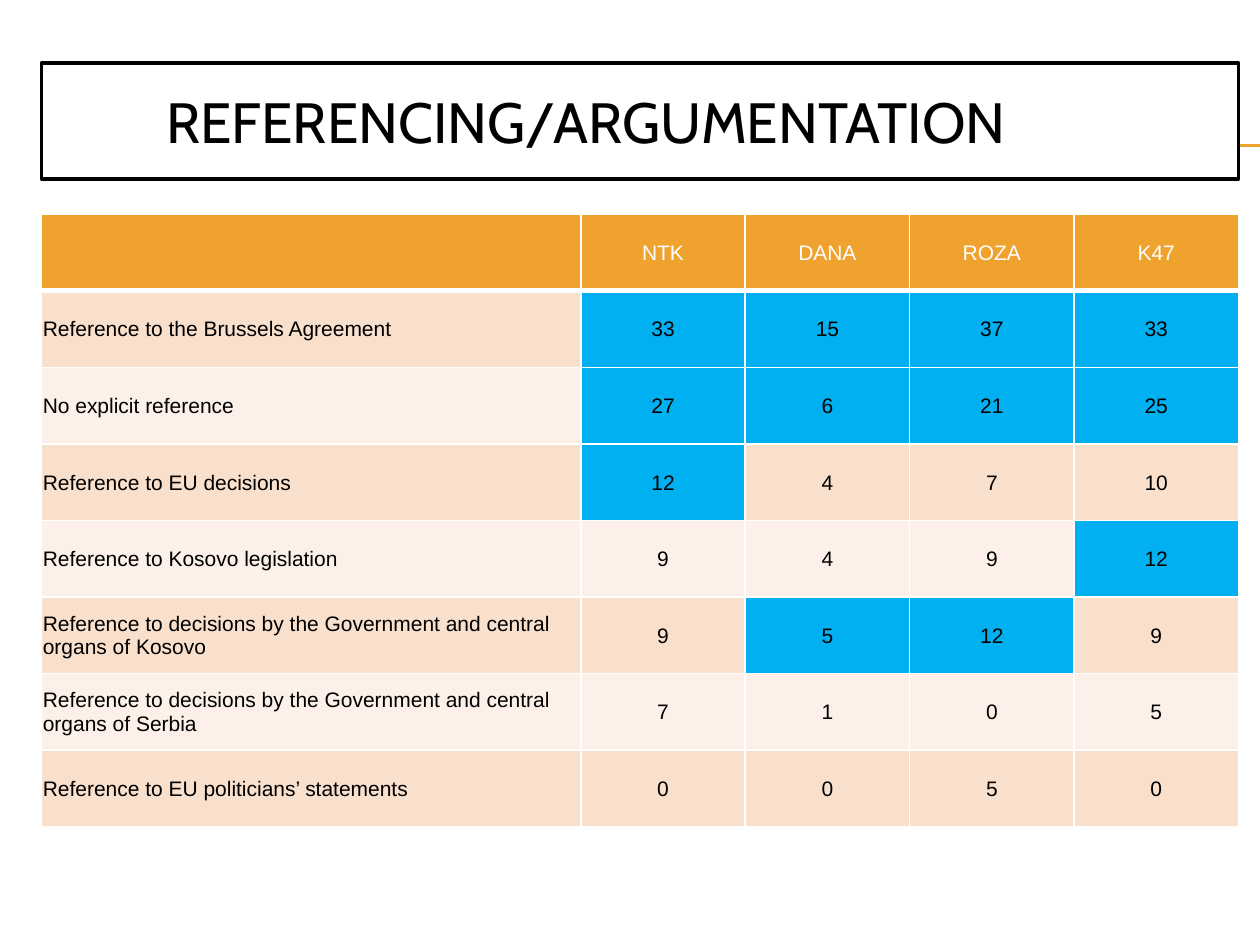
from lxml import etree
from pptx import Presentation
from pptx.dml.color import RGBColor
from pptx.enum.shapes import MSO_CONNECTOR
from pptx.enum.text import MSO_ANCHOR, MSO_AUTO_SIZE, PP_ALIGN
from pptx.oxml.ns import qn
from pptx.util import Inches, Pt

STRAIGHT = MSO_CONNECTOR.STRAIGHT
MIDDLE = MSO_ANCHOR.MIDDLE
NO_AUTOFIT = MSO_AUTO_SIZE.NONE
LEFT, CENTER = PP_ALIGN.LEFT, PP_ALIGN.CENTER

BLACK = RGBColor(0x00, 0x00, 0x00)
WHITE = RGBColor(0xFF, 0xFF, 0xFF)
ORANGE = RGBColor(0xF0, 0xA2, 0x2E)
PEACH = RGBColor(0xF9, 0xE0, 0xCD)
CREAM = RGBColor(0xFC, 0xF0, 0xE8)
BLUE = RGBColor(0x00, 0xB0, 0xF0)

TITLE_ONLY = 5
TOP_RANKS = 3  # the highest values of each channel are highlighted

CHANNELS = ["NTK", "DANA", "ROZA", "K47"]
REFERENCES = [
    ("Reference to the Brussels Agreement", [33, 15, 37, 33]),
    ("No explicit reference", [27, 6, 21, 25]),
    ("Reference to EU decisions", [12, 4, 7, 10]),
    ("Reference to Kosovo legislation", [9, 4, 9, 12]),
    ("Reference to decisions by the Government and central organs of Kosovo", [9, 5, 12, 9]),
    ("Reference to decisions by the Government and central organs of Serbia", [7, 1, 0, 5]),
    ("Reference to EU politicians’ statements", [0, 0, 5, 0]),
]


def write_text(frame, text, font="Arial", size=12, color=BLACK, align=LEFT):
    para = frame.paragraphs[0]
    para.alignment = align
    span = para.add_run()
    span.text = text
    span.font.name = font
    span.font.size = Pt(size)
    span.font.color.rgb = color


def set_border(cell, side, width, color=WHITE):
    properties = cell._tc.get_or_add_tcPr()
    line = etree.SubElement(properties, qn(f"a:ln{side}"), w=str(Pt(width)))
    fill = etree.SubElement(line, qn("a:solidFill"))
    etree.SubElement(fill, qn("a:srgbClr"), val=str(color))


class ReferenceSlide:
    """Holds the style and the current slide."""

    title_font = "Cabin"
    title_size = 32.4
    left, width = 0.33, 9.5

    def __init__(self, deck):
        self.slide = deck.slides.add_slide(deck.slide_layouts[TITLE_ONLY])

    def add_title(self, text, top, height):
        title = self.slide.shapes.title
        title.left, title.top = Inches(self.left), Inches(top)
        title.width, title.height = Inches(self.width), Inches(height)
        title.fill.solid()
        title.fill.fore_color.rgb = WHITE
        title.line.color.rgb = BLACK
        title.line.width = Pt(2)
        frame = title.text_frame
        frame.auto_size = NO_AUTOFIT
        frame.word_wrap = True
        frame.vertical_anchor = MIDDLE
        frame.margin_left = Inches(0.99)
        write_text(frame, text, self.title_font, self.title_size)

    def add_rule(self, height):
        rule = self.slide.shapes.add_connector(
            STRAIGHT, Inches(0.56), Inches(height), Inches(10), Inches(height))
        rule.line.color.rgb = ORANGE
        rule.line.width = Pt(0.75)
        etree.SubElement(rule.element.spPr, qn("a:effectLst"))
        # Rules run behind the title box
        self.slide.shapes.title.element.addprevious(rule.element)

    def add_cell(self, cell, text, fill, color=BLACK, align=CENTER, above=1, below=1):
        for side, width in zip("LRTB", (1, 1, above, below)):
            set_border(cell, side, width)
        cell.fill.solid()
        cell.fill.fore_color.rgb = fill
        cell.vertical_anchor = MIDDLE
        cell.margin_left = cell.margin_right = cell.margin_top = Inches(0.01)
        cell.margin_bottom = 0
        if text:
            write_text(cell.text_frame, text, color=color, align=align)

    def add_table(self, channels, references, top, height, label_width):
        row_count, column_count = len(references) + 1, len(channels) + 1
        table = self.slide.shapes.add_table(
            row_count, column_count, Inches(self.left), Inches(top),
            Inches(self.width), Inches(height)).table
        value_width = (self.width - label_width) / len(channels)
        for index, column in enumerate(table.columns):
            column.width = Inches(value_width if index else label_width)
        for row in table.rows:
            row.height = Inches(height / row_count)

        # Header row
        for column, name in enumerate(["", *channels]):
            self.add_cell(table.cell(0, column), name, ORANGE, WHITE, below=3)

        # Banded rows with the top values of each column in blue
        columns = zip(*(values for _, values in references))
        limits = [sorted(values)[-TOP_RANKS] for values in columns]
        for row, (label, values) in enumerate(references, 1):
            band = PEACH if row % 2 else CREAM
            above = 3 if row == 1 else 1
            self.add_cell(table.cell(row, 0), label, band, align=LEFT, above=above)
            for column, (value, limit) in enumerate(zip(values, limits), 1):
                fill = BLUE if value >= limit else band
                self.add_cell(table.cell(row, column), str(value), fill, above=above)


def main():
    deck = Presentation()
    deck.slide_width, deck.slide_height = Inches(10), Inches(7.5)
    page = ReferenceSlide(deck)
    page.add_title("REFERENCING/ARGUMENTATION", top=0.5, height=0.92)
    for height in (1.15, 1.16):
        page.add_rule(height)
    page.add_table(CHANNELS, REFERENCES, top=1.7, height=4.86, label_width=4.28)
    deck.save("out.pptx")


if __name__ == "__main__":
    main()
